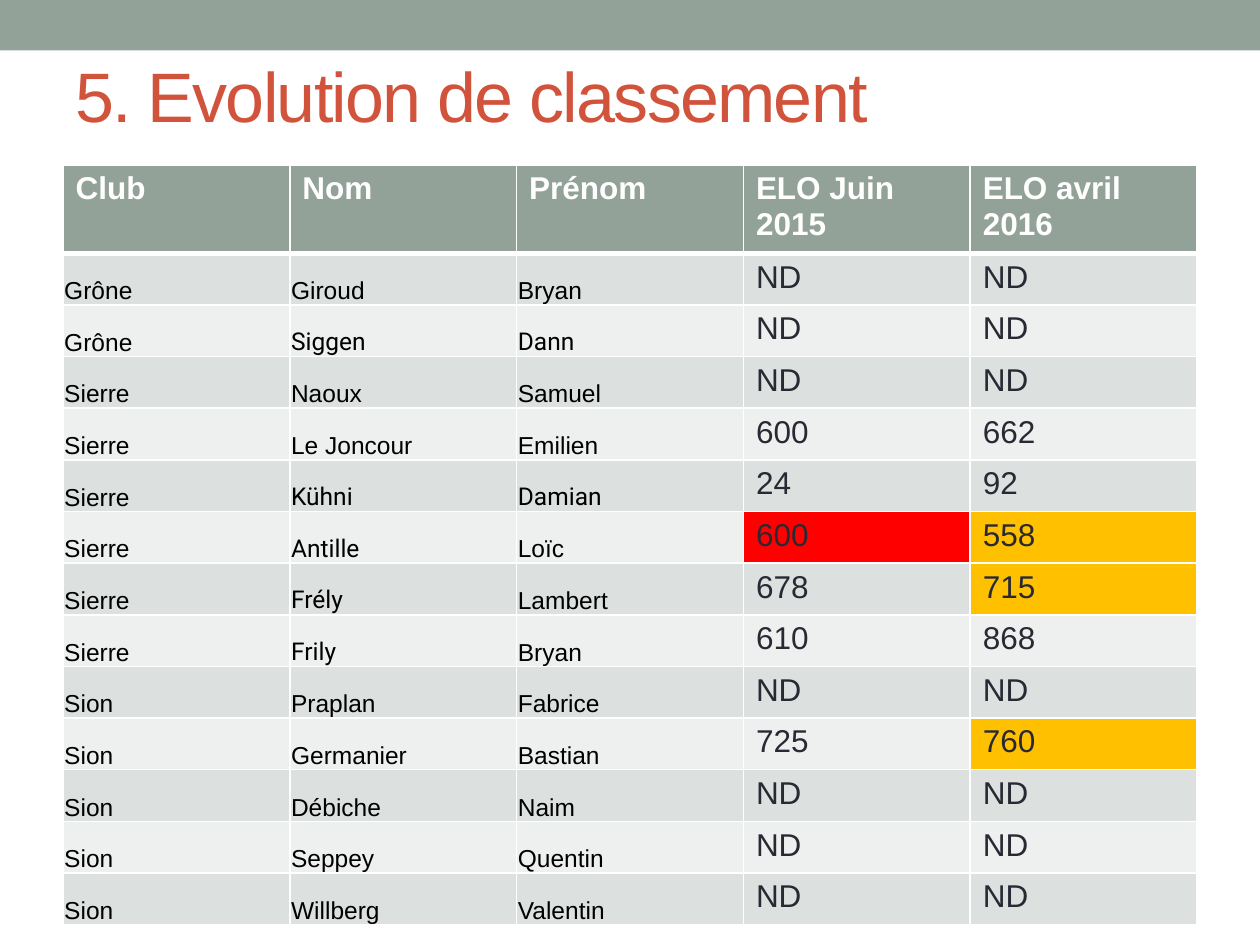
from lxml.etree import SubElement
from pptx import Presentation
from pptx.dml.color import RGBColor
from pptx.enum.shapes import MSO_SHAPE
from pptx.enum.text import MSO_ANCHOR
from pptx.oxml.ns import qn
from pptx.util import Inches, Pt

COLORS = {
    "sage": "93A299",
    "title": "D2533C",
    "white": "FFFFFF",
    "black": "000000",
    "ink": "292934",
    "dark_band": "DCE0DE",
    "light_band": "EEF0EF",
    "red": "FF0000",
    "amber": "FFC000",
}
HEADINGS = ["Club", "Nom", "Prénom", "ELO Juin 2015", "ELO avril 2016"]
PLAYERS = [
    ["Grône", "Giroud", "Bryan", "ND", "ND"],
    ["Grône", "Siggen", "Dann", "ND", "ND"],
    ["Sierre", "Naoux", "Samuel", "ND", "ND"],
    ["Sierre", "Le Joncour", "Emilien", "600", "662"],
    ["Sierre", "Kühni", "Damian", "24", "92"],
    ["Sierre", "Antille", "Loïc", "600", "558"],
    ["Sierre", "Frély", "Lambert", "678", "715"],
    ["Sierre", "Frily", "Bryan", "610", "868"],
    ["Sion", "Praplan", "Fabrice", "ND", "ND"],
    ["Sion", "Germanier", "Bastian", "725", "760"],
    ["Sion", "Débiche", "Naim", "ND", "ND"],
    ["Sion", "Seppey", "Quentin", "ND", "ND"],
    ["Sion", "Willberg", "Valentin", "ND", "ND"],
]
ROBOTO_NAMES = {"Siggen", "Dann", "Kühni", "Damian", "Antille", "Frély", "Frily"}
HIGHLIGHTS = {(6, 3): "red", (6, 4): "amber", (7, 4): "amber", (10, 4): "amber"}


def style_font(font, name, size, color, bold=False):
    font.name = name
    font.size = Pt(size)
    font.bold = bold
    font.color.rgb = RGBColor.from_string(COLORS[color])


def add_borders(cell, widths):
    properties = cell._tc.get_or_add_tcPr()
    for side, width in widths.items():
        line = SubElement(properties, qn(f"a:ln{side}"), w=str(Pt(width)))
        fill = SubElement(line, qn("a:solidFill"))
        SubElement(fill, qn("a:srgbClr"), val=COLORS["white"])


deck = Presentation()
deck.slide_width = Inches(10)
deck.slide_height = Inches(7.5)
page = deck.slides.add_slide(deck.slide_layouts[6])

band = page.shapes.add_shape(MSO_SHAPE.RECTANGLE, 0, 0, Inches(10), Inches(0.4))
band.shadow.inherit = False
band.fill.solid()
band.fill.fore_color.rgb = RGBColor.from_string(COLORS["sage"])
band.line.fill.background()

title = page.shapes.add_textbox(Inches(0.5), Inches(0.21), Inches(9), Inches(1.08))
title.text_frame.word_wrap = True
title.text_frame.vertical_anchor = MSO_ANCHOR.MIDDLE
para = title.text_frame.paragraphs[0]
span = para.add_run()
span.text = "5. Evolution de classement"
style_font(para.font, "Arial", 40, "title")
span.font._element.set("spc", "-100")

rows = [HEADINGS] + PLAYERS
table = page.shapes.add_table(
    len(rows), len(HEADINGS), Inches(0.5), Inches(1.31), Inches(9), Inches(5.97)
).table
for column in table.columns:
    column.width = Inches(1.8)
for row in table.rows:
    row.height = Inches(0.41)
table.rows[0].height = Inches(0.64)

for row_index, values in enumerate(rows):
    for column_index, value in enumerate(values):
        cell = table.cell(row_index, column_index)
        cell.text = value
        font = cell.text_frame.paragraphs[0].font
        top = 3 if row_index == 1 else 1
        bottom = 3 if row_index == 0 else 1
        add_borders(cell, {"L": 1, "R": 1, "T": top, "B": bottom})

        if row_index == 0:
            fill_color = "sage"
            style_font(font, "Arial", 18, "white", bold=True)
        else:
            stripe = "dark_band" if row_index % 2 else "light_band"
            fill_color = HIGHLIGHTS.get((row_index, column_index), stripe)
            if column_index < 3:
                name = "Roboto" if value in ROBOTO_NAMES else "Arial"
                style_font(font, name, 14, "black")
                cell.vertical_anchor = MSO_ANCHOR.BOTTOM
                cell.margin_left = cell.margin_right = cell.margin_top = Inches(0.01)
                cell.margin_bottom = 0
            else:
                style_font(font, "Arial", 18, "ink")

        cell.fill.solid()
        cell.fill.fore_color.rgb = RGBColor.from_string(COLORS[fill_color])

deck.save("out.pptx")
